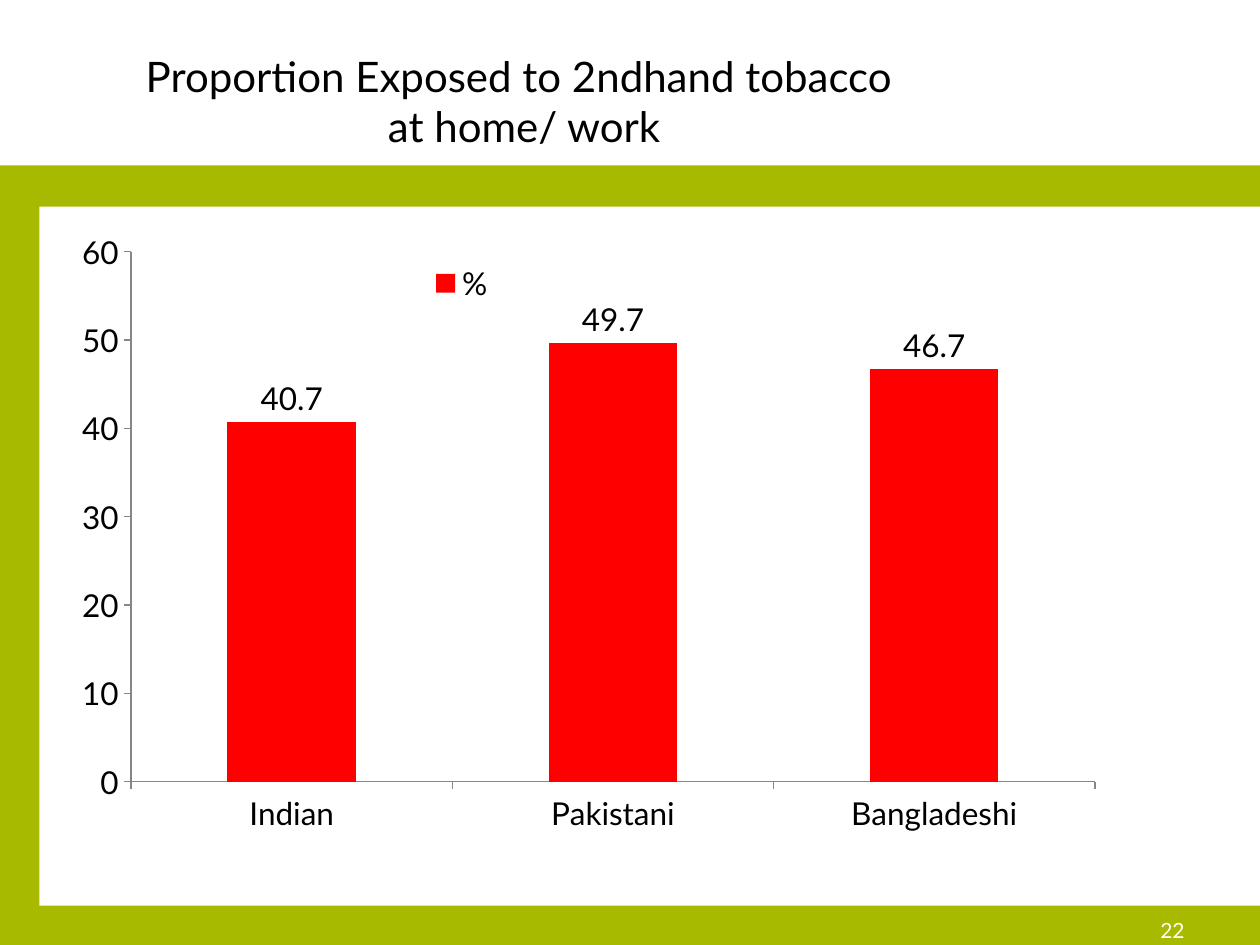
from dataclasses import dataclass

from lxml import etree
from pptx import Presentation
from pptx.chart.data import CategoryChartData
from pptx.dml.color import RGBColor
from pptx.enum.chart import (XL_CHART_TYPE, XL_LABEL_POSITION,
                             XL_LEGEND_POSITION, XL_TICK_MARK)
from pptx.enum.shapes import MSO_SHAPE
from pptx.enum.text import MSO_ANCHOR, PP_ALIGN
from pptx.util import Pt

RECT = MSO_SHAPE.RECTANGLE
COLUMN = XL_CHART_TYPE.COLUMN_CLUSTERED
OUTSIDE, NONE = XL_TICK_MARK.OUTSIDE, XL_TICK_MARK.NONE
OUTSIDE_END = XL_LABEL_POSITION.OUTSIDE_END
RIGHT_LEGEND = XL_LEGEND_POSITION.RIGHT
MIDDLE, CENTER, RIGHT = MSO_ANCHOR.MIDDLE, PP_ALIGN.CENTER, PP_ALIGN.RIGHT

FONT = "Lato"
COLORS = {"green": "A8BA00", "white": "FFFFFF", "black": "000000",
          "bar": "FF0000", "axis": "868686"}
C_NS = "http://schemas.openxmlformats.org/drawingml/2006/chart"


@dataclass
class Box:
    left: float
    top: float
    width: float
    height: float

    def pts(self):
        return [Pt(v) for v in (self.left, self.top, self.width, self.height)]


@dataclass
class Panel:
    box: Box
    color: str


PANELS = [Panel(Box(0, 94.5, 720, 445.5), "green"),
          Panel(Box(22.5, 118, 697.5, 399.5), "white")]
TITLE = Box(36, 21.6, 527, 72)
CHART = Box(36, 126, 648, 356.4)
NUMBER = Box(516, 517, 168, 28.8)


def rgb(name: str) -> RGBColor:
    return RGBColor.from_string(COLORS[name])


def format_font(font, size: float, color: str) -> None:
    for name, value in {"name": FONT, "size": Pt(size), "bold": False}.items():
        setattr(font, name, value)
    font.color.rgb = rgb(color)


def add_panel(slide, panel: Panel) -> None:
    sp = slide.shapes.add_shape(RECT, *panel.box.pts())
    sp.shadow.inherit = False
    sp.fill.solid()
    sp.fill.fore_color.rgb = rgb(panel.color)
    sp.line.fill.background()


def write_text(sp, text: str, size: float, color: str, align) -> None:
    tf = sp.text_frame
    tf.word_wrap = True
    tf.vertical_anchor = MIDDLE
    p = tf.paragraphs[0]
    p.text = text
    p.alignment = align
    for r in p.runs:
        format_font(r.font, size, color)


def set_layout(element, before: str, **values) -> None:
    """Place a chart part by fractions of the chart's size."""
    for old in element.findall(f"{{{C_NS}}}layout"):
        element.remove(old)
    layout = etree.Element(f"{{{C_NS}}}layout")
    manual = etree.SubElement(layout, f"{{{C_NS}}}manualLayout")
    for tag, value in values.items():
        etree.SubElement(manual, f"{{{C_NS}}}{tag}").set("val", str(value))
    element.find(f"{{{C_NS}}}{before}").addprevious(layout)


def add_exposure_chart(slide) -> None:
    data = CategoryChartData()
    data.categories = ["Indian", "Pakistani", "Bangladeshi"]
    data.add_series("%", [40.7, 49.7, 46.7])
    chart = slide.shapes.add_chart(COLUMN, *CHART.pts(), data).chart
    chart.has_title = False
    format_font(chart.font, 18, "black")

    for axis in (chart.category_axis, chart.value_axis):
        axis.has_major_gridlines = False
        axis.major_tick_mark, axis.minor_tick_mark = OUTSIDE, NONE
        axis.format.line.color.rgb = rgb("axis")
        axis.format.line.width = Pt(0.75)
    scale = {"minimum_scale": 0, "maximum_scale": 60, "major_unit": 10}
    for name, value in scale.items():
        setattr(chart.value_axis, name, value)

    plot = chart.plots[0]
    plot.gap_width = 150
    plot.vary_by_categories = False
    fill = plot.series[0].format.fill
    fill.solid()
    fill.fore_color.rgb = rgb("bar")
    plot.has_data_labels = True
    labels = plot.data_labels
    labels.show_value = True
    labels.position = OUTSIDE_END
    format_font(labels.font, 18, "black")

    chart.has_legend = True
    chart.legend.position = RIGHT_LEGEND
    chart.legend.include_in_layout = False
    format_font(chart.legend.font, 18, "black")

    plot_area = chart.element.find(f".//{{{C_NS}}}plotArea")
    set_layout(plot_area, "barChart", layoutTarget="inner", xMode="edge",
               yMode="edge", x=0.06, y=0.05, w=0.85, h=0.85)
    legend = chart.element.find(f".//{{{C_NS}}}legend")
    set_layout(legend, "overlay", xMode="edge", yMode="edge", x=0.32, y=0.06)


def main() -> None:
    prs = Presentation()
    prs.slide_width, prs.slide_height = Pt(720), Pt(540)
    slide = prs.slides.add_slide(prs.slide_layouts[5])
    for panel in PANELS:
        add_panel(slide, panel)

    title = slide.shapes.title
    title.left, title.top, title.width, title.height = TITLE.pts()
    write_text(title, "Proportion Exposed to 2ndhand tobacco \vat home/ work",
               24, "black", CENTER)
    add_exposure_chart(slide)
    number = slide.shapes.add_textbox(*NUMBER.pts())
    write_text(number, "22", 12, "white", RIGHT)
    prs.save("out.pptx")


if __name__ == "__main__":
    main()
